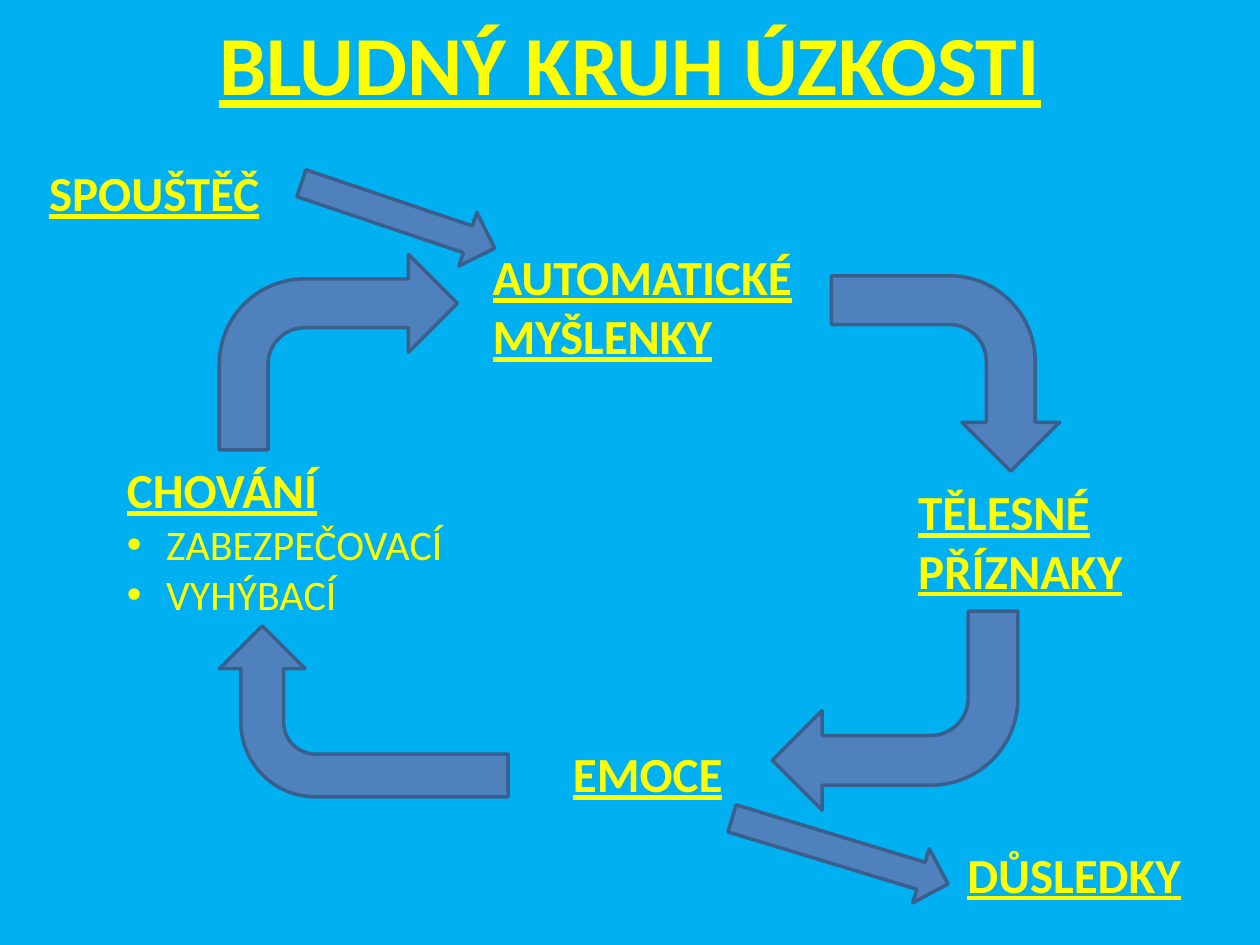
import pptx
import pptx.util
import pptx.dml.color
import pptx.enum.shapes
import pptx.enum.text
import lxml.etree
from pptx.oxml.ns import qn

Cm, Pt = pptx.util.Cm, pptx.util.Pt
SHAPE = pptx.enum.shapes.MSO_SHAPE
ANCHOR = pptx.enum.text.MSO_ANCHOR
ALIGN = pptx.enum.text.PP_ALIGN

BACKGROUND, TEXT, ARROW, ARROW_EDGE = "00B0F0", "FFFF00", "4F81BD", "3A5F8C"

# Boxes are left, top, width, height in centimetres
TITLE_BOX = (1.27, 0, 22.86, 2.51)
BEHAVIOUR_BOX = (2.31, 9.14, 7.01, 3.51)
STAGES = [
    ("TĚLESNÉ PŘÍZNAKY", (18.26, 9.58, 5, 2.64)),
    ("AUTOMATICKÉ MYŠLENKY", (9.68, 4.85, 7.01, 2.64)),
    ("EMOCE", (11.3, 14.86, 5, 1.45)),
    ("SPOUŠTĚČ", (0.74, 3.15, 5, 1.45)),
    ("DŮSLEDKY", (19.25, 16.89, 5, 1.45)),
]
ARROWS = [
    (SHAPE.BENT_ARROW, (4.42, 5.13, 4.8, 3.94), 0),
    (SHAPE.BENT_ARROW, (17.09, 5.23, 3.94, 4.6), 90),
    (SHAPE.BENT_ARROW, (15.57, 12.32, 4.95, 4.01), 180),
    (SHAPE.BENT_ARROW, (5.61, 11.43, 3.45, 5.82), 270),
    (SHAPE.RIGHT_ARROW, (5.97, 3.78, 4.11, 1.14), 18.6),
    (SHAPE.RIGHT_ARROW, (14.66, 16.59, 4.55, 1.14), 16.9),
]


def paint(color_format, hex_color):
    color_format.rgb = pptx.dml.color.RGBColor.from_string(hex_color)


def format_paragraph(p, size, heading=True):
    for r in p.runs:
        r.font.name = "Calibri"
        r.font.size = Pt(size)
        r.font.bold = r.font.underline = heading
        paint(r.font.color, TEXT)


def add_bullet(p, indent):
    pPr = p._p.get_or_add_pPr()
    pPr.set("marL", str(indent))
    pPr.set("indent", str(-indent))
    font = lxml.etree.SubElement(pPr, qn("a:buFont"))
    font.set("typeface", "Arial")
    lxml.etree.SubElement(pPr, qn("a:buChar")).set("char", "•")


def add_heading(s, text, box, size=28):
    tf = s.shapes.add_textbox(*map(Cm, box)).text_frame
    tf.word_wrap = True
    tf.text = text
    format_paragraph(tf.paragraphs[0], size)
    return tf


def add_title(s, text, box):
    tf = add_heading(s, text, box, 48)
    tf.vertical_anchor = ANCHOR.MIDDLE
    tf.paragraphs[0].alignment = ALIGN.CENTER


def add_bulleted_stage(s, heading, items, box):
    tf = add_heading(s, heading, box)
    for item in items:
        p = tf.add_paragraph()
        p.text = item
        format_paragraph(p, 24, heading=False)
        add_bullet(p, Cm(0.79))


def add_arrow(s, kind, box, rotation):
    """Place an arrow in its unrotated box, then turn it about the centre."""
    sp = s.shapes.add_shape(kind, *map(Cm, box))
    sp.rotation = rotation
    sp.shadow.inherit = False
    sp.fill.solid()
    paint(sp.fill.fore_color, ARROW)
    paint(sp.line.color, ARROW_EDGE)
    sp.line.width = Pt(2)


def main():
    prs = pptx.Presentation()
    prs.slide_width, prs.slide_height = Cm(25.4), Cm(19.05)
    s = prs.slides.add_slide(prs.slide_layouts[6])
    s.background.fill.solid()
    paint(s.background.fill.fore_color, BACKGROUND)

    add_title(s, "BLUDNÝ KRUH ÚZKOSTI", TITLE_BOX)
    add_bulleted_stage(s, "CHOVÁNÍ", ["ZABEZPEČOVACÍ", "VYHÝBACÍ"], BEHAVIOUR_BOX)
    for text, box in STAGES:
        add_heading(s, text, box)
    for kind, box, rotation in ARROWS:
        add_arrow(s, kind, box, rotation)
    prs.save("out.pptx")


if __name__ == "__main__":
    main()
